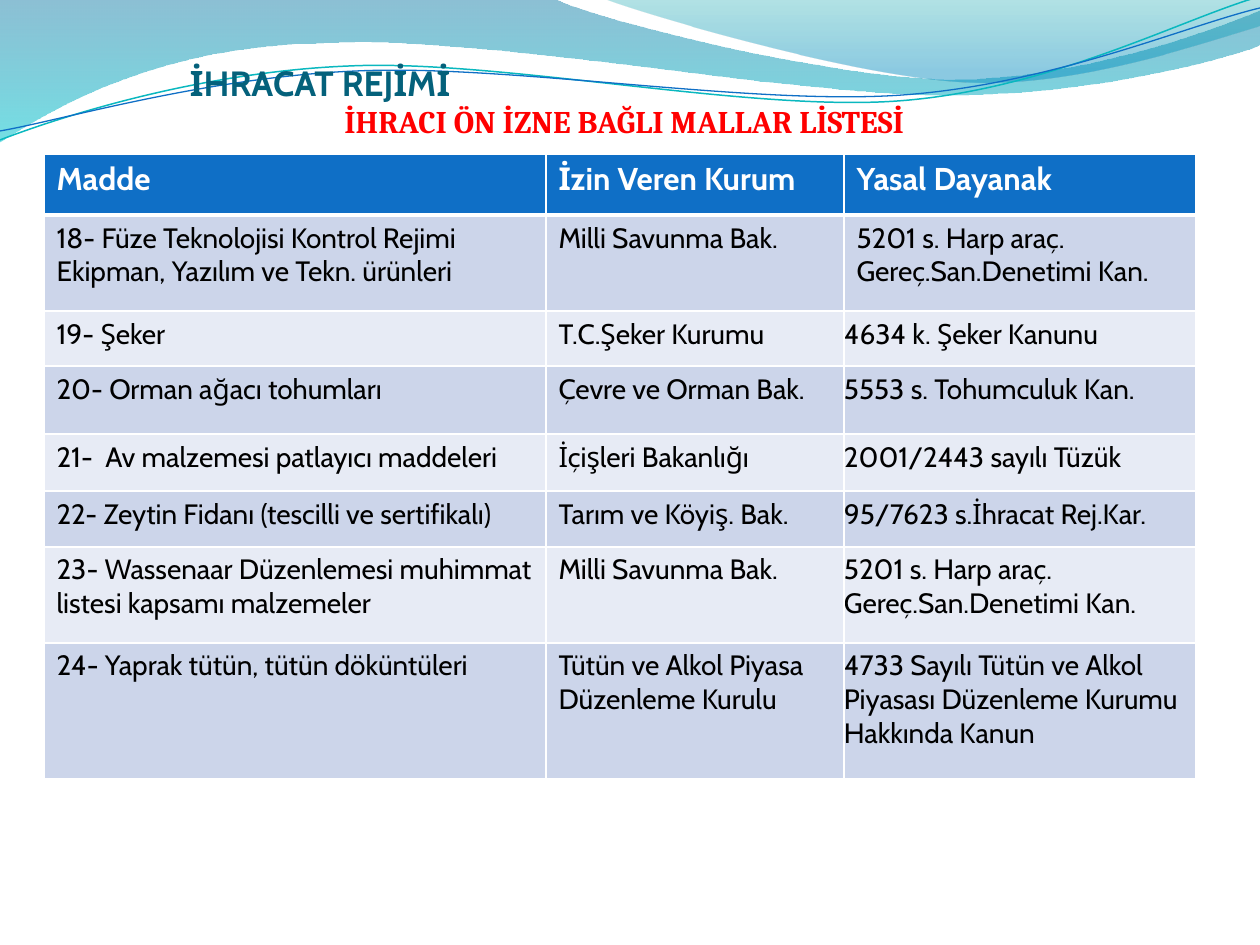
import math
import pptx
import pptx.util
import pptx.dml.color
import pptx.enum.text
import pptx.oxml
import pptx.oxml.ns

RGB = pptx.dml.color.RGBColor
WHITE = RGB(0xFF, 0xFF, 0xFF)
BLACK = RGB(0x00, 0x00, 0x00)
RED = RGB(0xFF, 0x00, 0x00)
TITLE_TEAL = RGB(0x04, 0x61, 0x7B)
HEADER_BLUE = RGB(0x0F, 0x6F, 0xC6)
LINE_TEAL = RGB(0x0A, 0xB8, 0xBF)
BAND_DARK = RGB(0xCC, 0xD5, 0xEA)
BAND_LIGHT = RGB(0xE7, 0xEB, 0xF5)
SEA_BLUE = RGB(0x00, 0x74, 0xA1)
CYAN = RGB(0x00, 0xC6, 0xCF)
GREEN_TEAL = RGB(0x00, 0xA1, 0xA9)
SKY_BLUE = RGB(0x00, 0x8B, 0xBF)

PX = 914400 / 126
NAMESPACE = pptx.oxml.ns.nsdecls("a")
qn = pptx.oxml.ns.qn


def px(length):
    return pptx.util.Emu(round(length * PX))


def draw_wave(shapes, box, rotation, start, segments, close):
    left, top, width, height = box
    turn = math.radians(-rotation)
    center_x, center_y = left + width / 2, top + height / 2
    commands = ""
    for segment in [start, *segments]:
        tag = "cubicBezTo" if len(segment) == 6 else "moveTo" if segment is start else "lnTo"
        nodes = ""
        for x, y in zip(segment[::2], segment[1::2]):
            dx, dy = x - center_x, y - center_y
            local_x = dx * math.cos(turn) - dy * math.sin(turn) + width / 2
            local_y = dx * math.sin(turn) + dy * math.cos(turn) + height / 2
            nodes += f'<a:pt x="{px(local_x)}" y="{px(local_y)}"/>'
        commands += f"<a:{tag}>{nodes}</a:{tag}>"
    if close:
        commands += "<a:close/>"
    builder = shapes.build_freeform(px(left), px(top))
    builder.add_line_segments([(px(left + width), px(top + height))], close=close)
    wave = builder.convert_to_shape()
    outline = next(wave.element.iter(qn("a:path")))
    outline.getparent().replace(outline, pptx.oxml.parse_xml(
        f'<a:path {NAMESPACE} w="{px(width)}" h="{px(height)}">{commands}</a:path>'))
    wave.rotation = rotation
    wave.shadow.inherit = False
    return wave


deck = pptx.Presentation()
deck.slide_width, deck.slide_height = px(1260), px(945)
slide = deck.slides.add_slide(deck.slide_layouts[5])

bands = [
    ((-1, -1, 1262, 143), (0, 0),
     [(554, -1), (600, 21, 837, 79, 955, 79), (1074, 79, 1207, 33, 1260, 11), (1261, 45),
      (1239, 55, 1096, 96, 940, 95), (784, 94, 481, 35, 324, 43), (163, 45, 58, 105, -1, 142),
      (0, 0)],
     [(0, SEA_BLUE, 45), (1, CYAN, 55)]),
    ((604, -1, 656, 88), (604, -1),
     [(641, 14, 859, 78, 969, 82), (1079, 87, 1211, 40, 1260, 26), (1260, 0), (604, -1)],
     [(0, GREEN_TEAL, 30), (0.8, SKY_BLUE, 45)]),
]
for box, start, segments, stops in bands:
    band = draw_wave(slide.shapes, box, 0, start, segments, True)
    band.line.fill.background()
    band.fill.gradient()
    band.fill.gradient_angle = 270
    for stop, (position, color, opacity) in zip(band.fill.gradient_stops, stops):
        stop.position = position
        stop.color.rgb = color
    for color_node, (_, _, opacity) in zip(band.element.spPr.iter(qn("a:srgbClr")), stops):
        alpha = color_node.makeelement(qn("a:alpha"), {"val": str(opacity * 1000)})
        color_node.append(alpha)

strands = [
    ((-2, 28, 1262, 89), (0, 140),
     [(60, 117, 199, 72, 349, 66), (498, 59, 747, 112, 898, 101), (1049, 90, 1182, 19, 1258, -3)],
     LINE_TEAL, 0.85),
    ((-2, 38, 1264, 73), (0, 131),
     [(59, 121, 207, 77, 357, 71), (508, 64, 752, 106, 903, 95), (1053, 84, 1185, 26, 1260, 8)],
     HEADER_BLUE, 0.75),
]
for box, start, segments, color, width in strands:
    strand = draw_wave(slide.shapes, box, 357.3, start, segments, False)
    strand.fill.background()
    strand.line.color.rgb = color
    strand.line.width = pptx.util.Pt(width)

heading = slide.shapes.title
heading.element.getparent().append(heading.element)
subheading = slide.shapes.add_textbox(px(63), px(96), px(1123), px(814))
ANCHOR = pptx.enum.text.MSO_ANCHOR
ALIGN = pptx.enum.text.PP_ALIGN
for attribute, value in {"left": 64, "top": 46, "width": 1029, "height": 58}.items():
    setattr(heading, attribute, px(value))

captions = [
    (heading, "\tİHRACAT REJİMİ", ALIGN.LEFT, TITLE_TEAL,
     {"name": "Cabin", "size": pptx.util.Pt(20), "bold": True},
     {"vertical_anchor": ANCHOR.BOTTOM, "margin_left": 0, "margin_right": 0,
      "margin_top": px(6), "margin_bottom": 0, "word_wrap": True}),
    (subheading, "İHRACI ÖN İZNE BAĞLI MALLAR LİSTESİ", ALIGN.CENTER, RED,
     {"name": "Cambria", "size": pptx.util.Pt(18), "bold": True},
     {"vertical_anchor": ANCHOR.TOP, "word_wrap": True}),
]
for holder, wording, alignment, color, font_format, frame_format in captions:
    frame = holder.text_frame
    for attribute, value in frame_format.items():
        setattr(frame, attribute, value)
    paragraph = frame.paragraphs[0]
    paragraph.alignment = alignment
    run = paragraph.add_run()
    run.text = wording
    run.font.color.rgb = color
    for attribute, value in font_format.items():
        setattr(run.font, attribute, value)
heading_properties = heading.text_frame.paragraphs[0]._p.get_or_add_pPr()
heading_properties.append(pptx.oxml.parse_xml(
    f'<a:tabLst {NAMESPACE}><a:tab pos="{px(126)}" algn="l"/></a:tabLst>'))

permits = [
    ("Madde", "İzin Veren Kurum", "Yasal Dayanak"),
    ("18- Füze Teknolojisi Kontrol Rejimi Ekipman, Yazılım ve Tekn. ürünleri",
     "Milli Savunma Bak.", "5201 s. Harp araç. Gereç.San.Denetimi Kan."),
    ("19- Şeker", "T.C.Şeker Kurumu", "4634 k. Şeker Kanunu"),
    ("20- Orman ağacı tohumları", "Çevre ve Orman Bak.", "5553 s. Tohumculuk Kan."),
    ("21-  Av malzemesi patlayıcı maddeleri", "İçişleri Bakanlığı", "2001/2443 sayılı Tüzük"),
    ("22- Zeytin Fidanı (tescilli ve sertifikalı)", "Tarım ve Köyiş. Bak.",
     "95/7623 s.İhracat Rej.Kar."),
    ("23- Wassenaar Düzenlemesi muhimmat listesi kapsamı malzemeler",
     "Milli Savunma Bak.", "5201 s. Harp araç. Gereç.San.Denetimi Kan."),
    ("24- Yaprak tütün, tütün döküntüleri", "Tütün ve Alkol Piyasa Düzenleme Kurulu",
     "4733 Sayılı Tütün ve Alkol Piyasası Düzenleme Kurumu Hakkında Kanun"),
]
column_widths = [502, 298, 352]
row_heights = [61, 96, 55, 68, 57, 56, 96, 136]
permit_table = slide.shapes.add_table(
    len(permits), len(column_widths), px(44), px(154),
    px(sum(column_widths)), px(sum(row_heights))).table
for column, width in zip(permit_table.columns, column_widths):
    column.width = px(width)
for row, height in zip(permit_table.rows, row_heights):
    row.height = px(height)

for row_index, permit in enumerate(permits):
    is_header = row_index == 0
    band_color = HEADER_BLUE if is_header else (BAND_LIGHT, BAND_DARK)[row_index % 2]
    border_widths = {"L": 1, "R": 1, "T": 3 if row_index == 1 else 1, "B": 3 if is_header else 1}
    for column_index, wording in enumerate(permit):
        cell = permit_table.cell(row_index, column_index)
        cell.fill.solid()
        cell.fill.fore_color.rgb = band_color
        if column_index == 2 and row_index > 1:
            cell.margin_left = 0
        run = cell.text_frame.paragraphs[0].add_run()
        run.text = wording
        run.font.color.rgb = WHITE if is_header else BLACK
        font_format = {"name": "Cabin", "size": pptx.util.Pt(18 if is_header else 16), "bold": is_header}
        for attribute, value in font_format.items():
            setattr(run.font, attribute, value)
        properties = cell._tc.get_or_add_tcPr()
        for position, (side, width) in enumerate(border_widths.items()):
            properties.insert(position, pptx.oxml.parse_xml(
                f'<a:ln{side} {NAMESPACE} w="{pptx.util.Pt(width)}">'
                f'<a:solidFill><a:srgbClr val="{WHITE}"/></a:solidFill></a:ln{side}>'))

deck.save("out.pptx")
